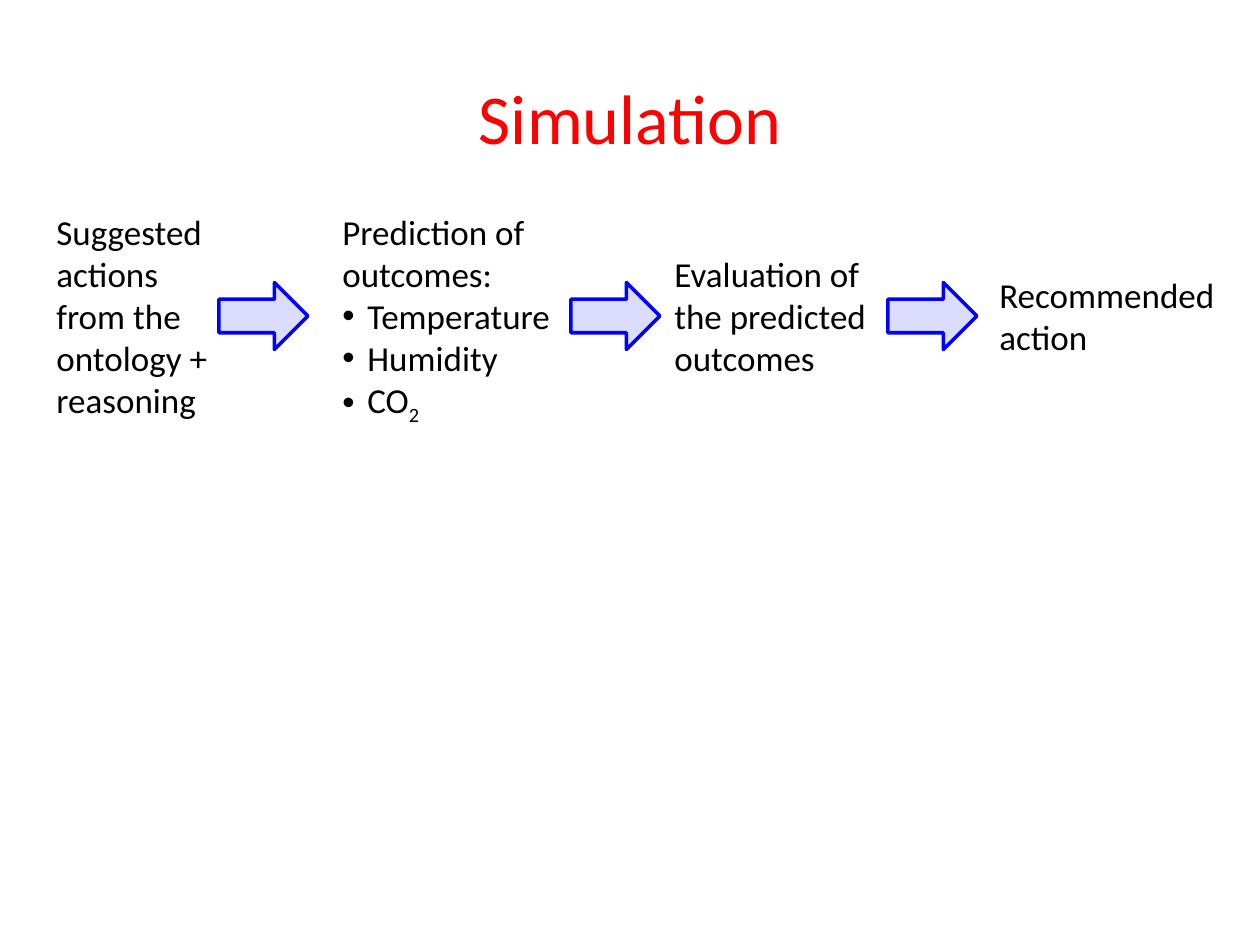
"""Build the Simulation slide: four process steps joined by block arrows."""
import dataclasses

import lxml.etree
import pptx
import pptx.dml.color
import pptx.enum.shapes
import pptx.enum.text
import pptx.oxml.ns
import pptx.util


@dataclasses.dataclass(frozen=True)
class Theme:
    font: str = "Calibri"
    title_size: int = 40
    body_size: int = 20
    line_width: int = 2
    title: str = "FF0000"
    text: str = "000000"
    arrow_fill: str = "DCDCFF"
    arrow_line: str = "0000FF"


@dataclasses.dataclass(frozen=True)
class Item:
    text: str
    bullet: bool = False
    subscript: str = ""


@dataclasses.dataclass(frozen=True)
class Step:
    left: int
    width: int
    items: tuple
    wrap: bool = False


THEME = Theme()
TITLE = "Simulation"
STEPS = [
    Step(44, 180, (Item("Suggested \nactions"), Item("from the \nontology +\nreasoning"))),
    Step(330, 239, (
        Item("Prediction of\noutcomes:"),
        Item("Temperature", bullet=True),
        Item("Humidity", bullet=True),
        Item("CO", bullet=True, subscript="2"),
    ), wrap=True),
    Step(662, 227, (Item("Evaluation of \nthe predicted \noutcomes"),)),
    Step(987, 251, (Item("Recommended\naction"),)),
]
ARROW_LEFTS = [219, 571, 888]
ARROW_WIDTH, ARROW_HEIGHT = 89, 67
SLIDE_SIZE = (1260, 945)
TITLE_BOX = (63, 38, 1134, 158)
ROW_CENTRE = 316
LINE_HEIGHT = 42
BOX_PADDING = 13
BULLET_INDENT = 25
EMU_PER_PX = 914400 // 126


def px(length):
    return pptx.util.Emu(round(length * EMU_PER_PX))


def centred_box(left, width, height):
    return [px(length) for length in (left, ROW_CENTRE - height / 2, width, height)]


def colour(value):
    return pptx.dml.color.RGBColor.from_string(value)


def format_runs(paragraph, size, value):
    for run in paragraph.runs:
        run.font.name = THEME.font
        run.font.size = pptx.util.Pt(size)
        run.font.color.rgb = colour(value)


def add_bullet(paragraph):
    properties = paragraph._p.get_or_add_pPr()
    properties.set("marL", str(px(BULLET_INDENT)))
    properties.set("indent", str(-px(BULLET_INDENT)))
    font = lxml.etree.SubElement(properties, pptx.oxml.ns.qn("a:buFont"))
    font.set("typeface", "Arial")
    bullet = lxml.etree.SubElement(properties, pptx.oxml.ns.qn("a:buChar"))
    bullet.set("char", "•")


def add_title(slide):
    title = slide.shapes.title
    title.left, title.top, title.width, title.height = map(px, TITLE_BOX)
    title.text_frame.text = TITLE
    title.text_frame.vertical_anchor = pptx.enum.text.MSO_ANCHOR.MIDDLE
    paragraph = title.text_frame.paragraphs[0]
    paragraph.alignment = pptx.enum.text.PP_ALIGN.CENTER
    format_runs(paragraph, THEME.title_size, THEME.title)


def add_step(slide, step):
    line_count = sum(len(item.text.split("\n")) for item in step.items)
    height = line_count * LINE_HEIGHT + BOX_PADDING
    frame = slide.shapes.add_textbox(*centred_box(step.left, step.width, height)).text_frame
    frame.word_wrap = step.wrap
    frame.auto_size = pptx.enum.text.MSO_AUTO_SIZE.SHAPE_TO_FIT_TEXT
    for index, item in enumerate(step.items):
        paragraph = frame.add_paragraph() if index else frame.paragraphs[0]
        paragraph.text = item.text.replace("\n", "\v")
        if item.bullet:
            add_bullet(paragraph)
        if item.subscript:
            run = paragraph.add_run()
            run.text = item.subscript
            run._r.get_or_add_rPr().set("baseline", "-25000")
        format_runs(paragraph, THEME.body_size, THEME.text)


def add_arrow(slide, left):
    shape = slide.shapes.add_shape(
        pptx.enum.shapes.MSO_SHAPE.RIGHT_ARROW,
        *centred_box(left, ARROW_WIDTH, ARROW_HEIGHT),
    )
    shape.shadow.inherit = False
    shape.fill.solid()
    shape.fill.fore_color.rgb = colour(THEME.arrow_fill)
    shape.line.color.rgb = colour(THEME.arrow_line)
    shape.line.width = pptx.util.Pt(THEME.line_width)


def main():
    presentation = pptx.Presentation()
    presentation.slide_width, presentation.slide_height = map(px, SLIDE_SIZE)
    slide = presentation.slides.add_slide(presentation.slide_layouts.get_by_name("Title Only"))
    add_title(slide)
    for step in STEPS:
        add_step(slide, step)
    for left in ARROW_LEFTS:
        add_arrow(slide, left)
    presentation.save("out.pptx")


if __name__ == "__main__":
    main()
